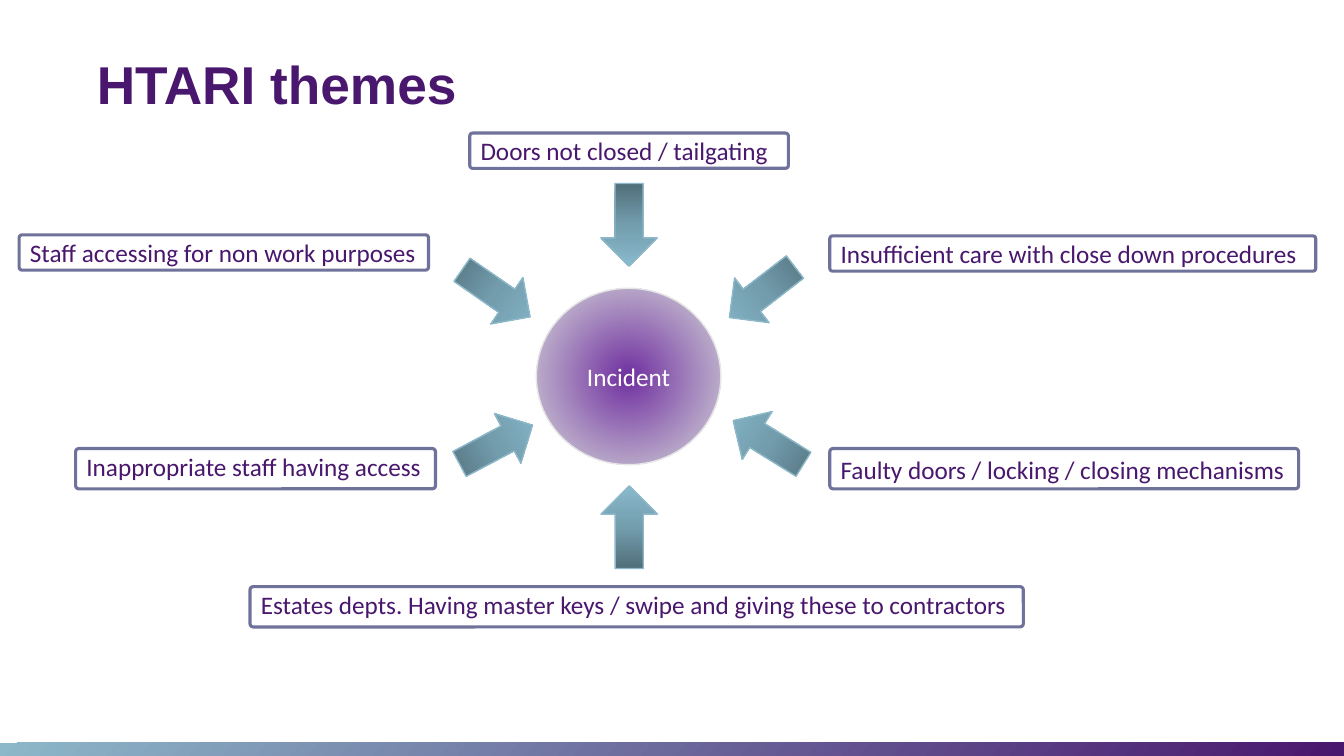
from dataclasses import dataclass

from lxml import etree
from pptx import Presentation
from pptx import util as u
from pptx.dml.color import RGBColor
from pptx.enum import shapes as es
from pptx.enum import text as et
from pptx.oxml import ns

PURPLE = RGBColor(0x49, 0x17, 0x6D)
VIOLET = RGBColor(0x70, 0x30, 0xA0)
LILAC = RGBColor(0xC9, 0xC3, 0xD2)
PALE_LILAC = RGBColor(0xE4, 0xE2, 0xE8)
SLATE = RGBColor(0x6F, 0x73, 0x9B)
TEAL = RGBColor(0x8D, 0xB8, 0xC9)
DARK_TEAL = RGBColor(0x51, 0x6E, 0x7A)
MID_TEAL = RGBColor(0x73, 0x9D, 0xAD)
LIGHT_TEAL = RGBColor(0x89, 0xBA, 0xCD)
GREY = RGBColor(0xE6, 0xE6, 0xE6)
WHITE = RGBColor(0xFF, 0xFF, 0xFF)

ARROW_WIDTH, ARROW_HEIGHT = 0.56, 0.82
ARROW_STOPS = [(0, DARK_TEAL), (50, MID_TEAL), (100, LIGHT_TEAL)]


@dataclass
class Theme:
    label: str
    left: float
    top: float
    width: float
    height: float
    arrow_left: float
    arrow_top: float
    arrow_turn: float
    line_spacing: float = 0.9


THEMES = [
    Theme("Doors not closed / tailgating", 4.66, 1.32, 3.16, 0.35, 5.96, 1.82, 0),
    Theme("Staff accessing for non work purposes", 0.19, 2.33, 4.06, 0.35, 4.64, 2.5, 304.7),
    Theme("Insufficient care with close down procedures", 8.23, 2.34, 4.82, 0.35, 7.28, 2.49, 52.4),
    Theme("Faulty doors / locking / closing mechanisms", 8.23, 4.45, 4.65, 0.4, 7.34, 3.98, 121.9, 1.0),
    Theme("Inappropriate staff having access", 0.75, 4.45, 3.57, 0.4, 4.64, 4, 242),
    Theme("Estates depts. Having master keys / swipe and giving these to contractors",
          2.48, 5.82, 7.67, 0.4, 5.96, 4.82, 180),
]


def add_box(parent, kind, left: float, top: float, width: float, height: float,
            line: RGBColor | None = None, line_width: float = 1):
    box = parent.add_shape(kind, u.Inches(left), u.Inches(top), u.Inches(width), u.Inches(height))
    box.shadow.inherit = False
    if line is None:
        box.line.fill.background()
    else:
        box.line.color.rgb = line
        box.line.width = u.Pt(line_width)
    return box


def fill_gradient(box, stops: list[tuple[int, RGBColor]], angle: float | None = None) -> None:
    box.fill.gradient()
    gradient = box._element.spPr.find(ns.qn("a:gradFill"))
    for child in list(gradient):
        gradient.remove(child)
    stop_list = etree.SubElement(gradient, ns.qn("a:gsLst"))
    for position, color in stops:
        stop = etree.SubElement(stop_list, ns.qn("a:gs"), pos=str(position * 1000))
        etree.SubElement(stop, ns.qn("a:srgbClr"), val=str(color))
    if angle is None:
        circle = etree.SubElement(gradient, ns.qn("a:path"), path="circle")
        etree.SubElement(circle, ns.qn("a:fillToRect"), l="50000", t="50000", r="50000", b="50000")
    else:
        etree.SubElement(gradient, ns.qn("a:lin"), ang=str(round(angle * 60000)), scaled="0")


def write_text(box, content: str, *, size: float = 18, font: str = "Calibri",
               color: RGBColor = PURPLE, bold: bool = False, align=et.PP_ALIGN.LEFT,
               anchor=et.MSO_ANCHOR.TOP, line_spacing: float = 1.0) -> None:
    frame = box.text_frame
    frame.word_wrap = True
    frame.auto_size = et.MSO_AUTO_SIZE.NONE
    frame.vertical_anchor = anchor
    para = frame.paragraphs[0]
    para.alignment = align
    para.line_spacing = line_spacing
    para.space_before = u.Pt(0)
    span = para.add_run()
    span.text = content
    span.font.size = u.Pt(size)
    span.font.name = font
    span.font.bold = bold
    span.font.color.rgb = color


def add_theme(page, theme: Theme) -> None:
    group = page.shapes.add_group_shape().shapes
    arrow = add_box(group, es.MSO_SHAPE.DOWN_ARROW, theme.arrow_left, theme.arrow_top,
                    ARROW_WIDTH, ARROW_HEIGHT, TEAL)
    fill_gradient(arrow, ARROW_STOPS, 90)
    arrow.rotation = theme.arrow_turn
    box = add_box(group, es.MSO_SHAPE.ROUNDED_RECTANGLE, theme.left, theme.top,
                  theme.width, theme.height, SLATE, 2.25)
    box.adjustments[0] = 0.08
    box.fill.solid()
    box.fill.fore_color.rgb = WHITE
    write_text(box, theme.label, line_spacing=theme.line_spacing)


def main() -> None:
    deck = Presentation()
    deck.slide_width, deck.slide_height = u.Inches(13.33), u.Inches(7.5)
    page = deck.slides.add_slide(deck.slide_layouts[5])

    bar = add_box(page.shapes, es.MSO_SHAPE.RECTANGLE, 0, 7.37, 13.33, 0.13)
    fill_gradient(bar, [(0, TEAL), (100, PURPLE)], 40)

    title = page.shapes.title
    title.left, title.top = u.Inches(0.86), u.Inches(0.55)
    title.width, title.height = u.Inches(9.29), u.Inches(0.65)
    write_text(title, "HTARI themes", size=38, font="Arial", bold=True,
               anchor=et.MSO_ANCHOR.BOTTOM, line_spacing=0.9)

    incident = add_box(page.shapes, es.MSO_SHAPE.OVAL, 5.32, 2.86, 1.83, 1.75, GREY)
    fill_gradient(incident, [(0, VIOLET), (87, LILAC), (100, PALE_LILAC)])
    write_text(incident, "Incident", color=WHITE, align=et.PP_ALIGN.CENTER,
               anchor=et.MSO_ANCHOR.MIDDLE)

    for theme in THEMES:
        add_theme(page, theme)
    deck.save("out.pptx")


if __name__ == "__main__":
    main()
